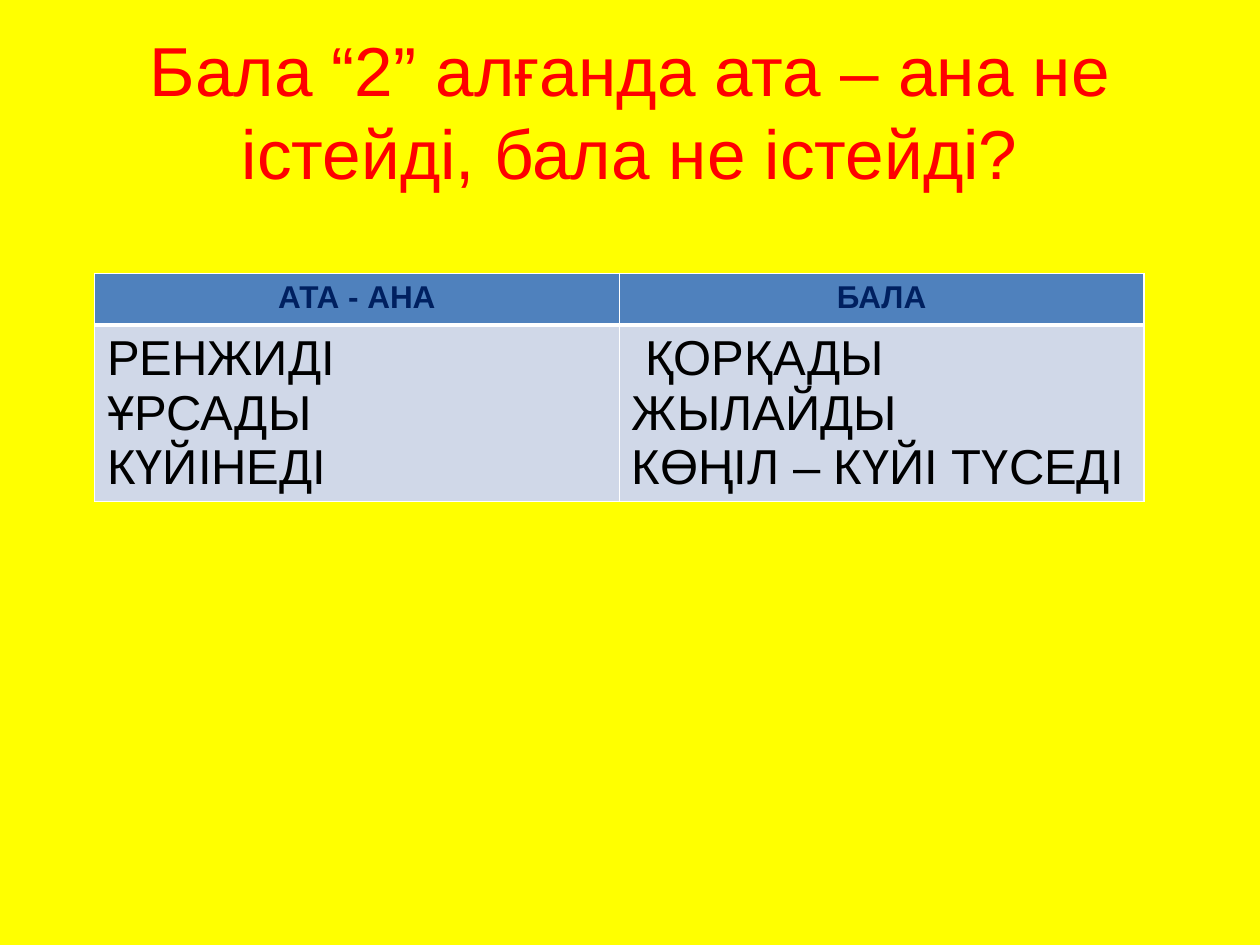
from lxml.etree import SubElement
from pptx import Presentation
from pptx.dml.color import RGBColor
from pptx.enum.text import MSO_ANCHOR, MSO_AUTO_SIZE, PP_ALIGN
from pptx.oxml.ns import qn
from pptx.util import Inches, Pt

TITLE = "Бала “2” алғанда ата – ана не істейді, бала не істейді?"
REACTIONS = {
    "АТА - АНА": ["РЕНЖИДІ", "ҰРСАДЫ", "КҮЙІНЕДІ"],
    "БАЛА": [" ҚОРҚАДЫ", "ЖЫЛАЙДЫ", "КӨҢІЛ – КҮЙІ ТҮСЕДІ"],
}
TITLE_FONT = {"name": "Arial", "size": Pt(39.6), "bold": False}
HEADER_FONT = {"name": "Arial", "size": Pt(18), "bold": True}
BODY_FONT = {"name": "Arial", "size": Pt(28), "bold": False}


def paint(fill, color):
    """Give a fill one solid colour."""
    fill.solid()
    fill.fore_color.rgb = RGBColor.from_string(color)


def write(text_frame, lines, font, color, align):
    """Write one formatted paragraph for each line."""
    text_frame.text = "\n".join(lines)
    for paragraph in text_frame.paragraphs:
        paragraph.alignment = align
        for run in paragraph.runs:
            for name, value in font.items():
                setattr(run.font, name, value)
            run.font.color.rgb = RGBColor.from_string(color)


def add_borders(cell, widths, color="FFFFFF"):
    """Draw the cell borders, with widths in points by side."""
    properties = cell._tc.get_or_add_tcPr()
    for index, (side, width) in enumerate(widths.items()):
        line = properties.makeelement(qn(f"a:ln{side}"), {"w": str(Pt(width))})
        solid = SubElement(line, qn("a:solidFill"))
        SubElement(solid, qn("a:srgbClr"), val=color)
        properties.insert(index, line)


def add_title(slide):
    """Place and format the title."""
    title = slide.shapes.title
    title.left, title.top = Inches(0.5), Inches(0.25)
    title.width, title.height = Inches(9), Inches(1.25)
    write(title.text_frame, [TITLE], TITLE_FONT, "FF0000", PP_ALIGN.CENTER)
    title.text_frame.auto_size = MSO_AUTO_SIZE.NONE
    title.text_frame.vertical_anchor = MSO_ANCHOR.MIDDLE


def add_reaction_table(slide):
    """Add the table of reactions, one column for each person."""
    frame = slide.shapes.add_table(
        2, len(REACTIONS), Inches(0.75), Inches(2.17), Inches(8.33), Inches(1.81)
    )
    table = frame.table
    table.rows[0].height = Inches(0.41)
    table.rows[1].height = Inches(1.4)
    for column, (person, reactions) in enumerate(REACTIONS.items()):
        header, body = table.cell(0, column), table.cell(1, column)
        write(header.text_frame, [person], HEADER_FONT, "002060", PP_ALIGN.CENTER)
        write(body.text_frame, reactions, BODY_FONT, "000000", PP_ALIGN.LEFT)
        paint(header.fill, "4F81BD")
        paint(body.fill, "D0D8E8")
        add_borders(header, {"L": 1, "R": 1, "T": 1, "B": 3})
        add_borders(body, {"L": 1, "R": 1, "T": 3, "B": 1})


def main():
    """Build and save the presentation."""
    presentation = Presentation()
    presentation.slide_width, presentation.slide_height = Inches(10), Inches(7.5)
    slide = presentation.slides.add_slide(presentation.slide_layouts[5])
    paint(slide.background.fill, "FFFF00")
    add_title(slide)
    add_reaction_table(slide)
    presentation.save("out.pptx")


if __name__ == "__main__":
    main()
